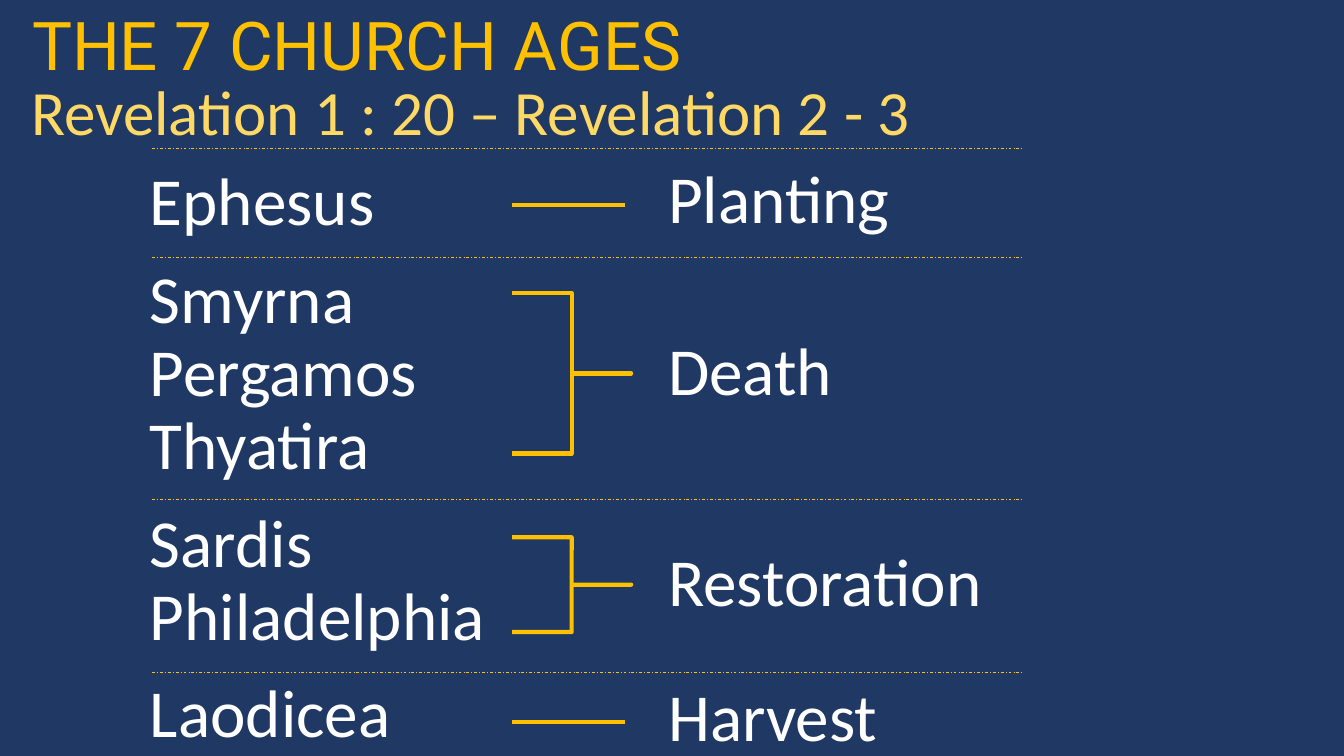
from lxml.etree import SubElement
from pptx import Presentation
from pptx.dml.color import RGBColor
from pptx.enum.dml import MSO_LINE
from pptx.enum.shapes import MSO_CONNECTOR, MSO_SHAPE
from pptx.oxml.ns import qn
from pptx.util import Pt

NAVY = "203864"
GOLD = "FFC000"
SAND = "FFD966"
WHITE = "FFFFFF"
AGES = [["Ephesus"], ["Smyrna", "Pergamos", "Thyatira"],
        ["Sardis", "Philadelphia"], ["Laodicea"]]
STAGES = [("Planting", 119.5), ("Death", 242), ("Restoration", 393),
          ("Harvest", 489)]
RULES = [105.8, 183.6, 356.4, 480.2]
DASHES = [146.2, 515.5]
BRACES = [(209.5, 114.5), (383.8, 67.7)]
MARK_X = 365.8
GAP = 6
BREAK = 23.7


def paint(color, tone):
    color.rgb = RGBColor.from_string(tone)


def add_text(slide, lines, x, y, w, h, tone=WHITE, size=48, font="Calibri"):
    frame = slide.shapes.add_textbox(Pt(x), Pt(y), Pt(w), Pt(h)).text_frame
    frame.word_wrap = True
    frame.text = "\n".join(lines)
    for para in frame.paragraphs:
        para.line_spacing = 0.8
        para.space_after = Pt(GAP)
        for run in para.runs:
            run.font.name = font
            run.font.size = Pt(size)
            paint(run.font.color, tone)
    return frame


def add_ages(slide):
    names = [name for group in AGES for name in group]
    frame = add_text(slide, names, 100, 121, 541.5, 423)
    ends = {group[-1] for group in AGES[:-1]}
    for para in frame.paragraphs:
        if para.text in ends:
            para.space_after = Pt(BREAK)


def add_line(slide, x, y, w, width, dash=None):
    line = slide.shapes.add_connector(
        MSO_CONNECTOR.STRAIGHT, Pt(x), Pt(y), Pt(x + w), Pt(y))
    paint(line.line.color, GOLD)
    line.line.width = Pt(width)
    if dash:
        line.line.dash_style = dash
    SubElement(line._element.spPr, qn("a:effectLst"))


def add_brace(slide, y, h):
    brace = slide.shapes.add_shape(
        MSO_SHAPE.RIGHT_BRACE, Pt(MARK_X), Pt(y), Pt(85), Pt(h))
    brace.adjustments[0] = 0
    brace.adjustments[1] = 0.5
    brace.shadow.inherit = False
    brace.fill.background()
    paint(brace.line.color, GOLD)
    brace.line.width = Pt(3)


def main():
    deck = Presentation()
    deck.slide_width = Pt(960)
    deck.slide_height = Pt(540)
    slide = deck.slides.add_slide(deck.slide_layouts[6])
    slide.background.fill.solid()
    paint(slide.background.fill.fore_color, NAVY)

    add_text(slide, ["THE 7 CHURCH AGES"], 15.8, 10, 937, 54,
             GOLD, font="Roboto")
    add_text(slide, ["Revelation 1 : 20 – Revelation 2 - 3"],
             15.1, 58.3, 772.6, 51.8, SAND, 45)
    add_ages(slide)
    for name, y in STAGES:
        add_text(slide, [name], 470.2, y, 247, 54.7)
    for y, h in BRACES:
        add_brace(slide, y, h)
    for y in DASHES:
        add_line(slide, MARK_X, y, 80.6, 3)
    for y in RULES:
        add_line(slide, 108.7, y, 621.4, 0.5, MSO_LINE.DASH_DOT)
    deck.save("out.pptx")


if __name__ == "__main__":
    main()
